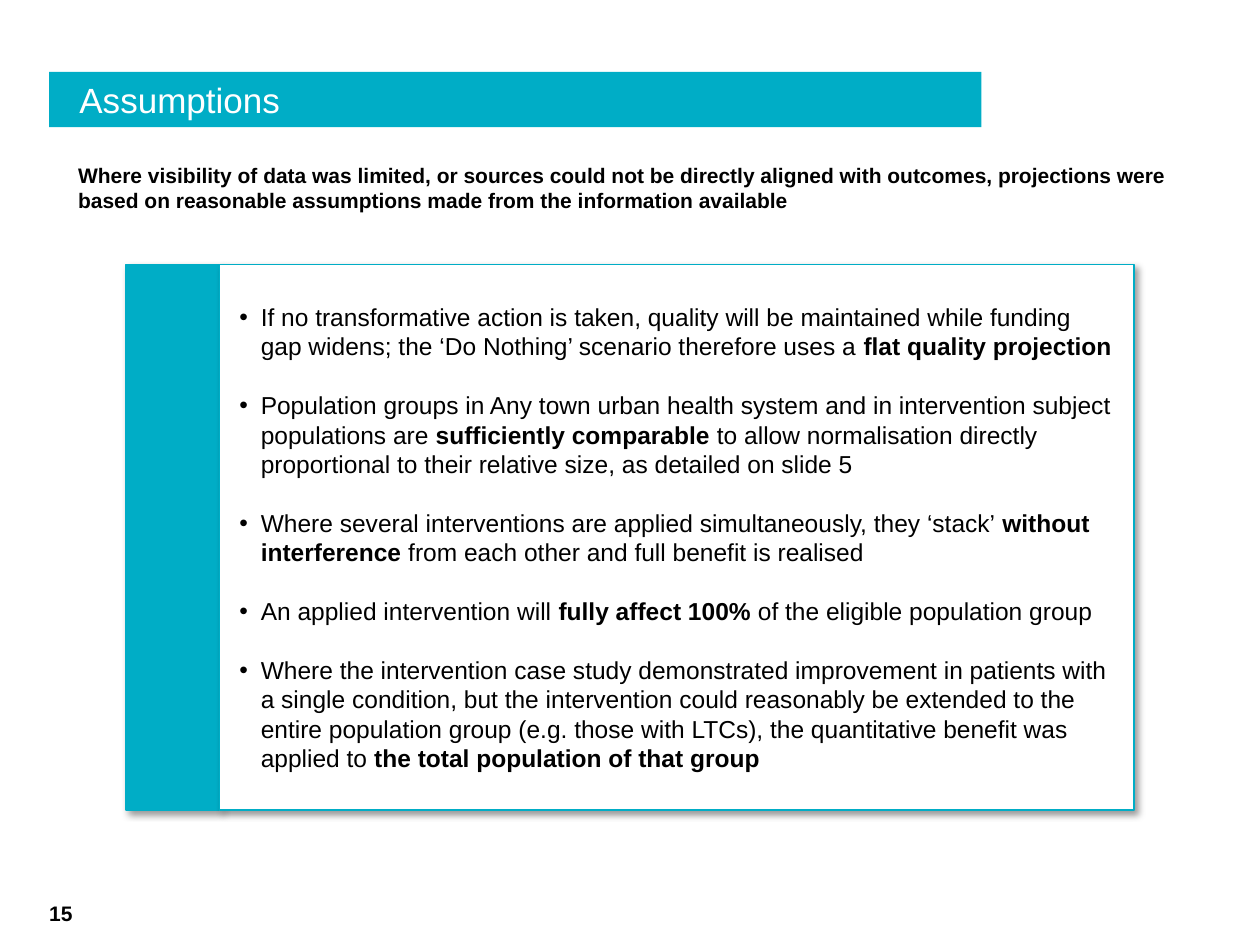
"""Build the Assumptions slide."""
import pptx
import pptx.dml.color
import pptx.enum.shapes
import pptx.enum.text
import pptx.oxml
import pptx.oxml.ns
import pptx.util
from pptx.util import Inches

TEAL, WHITE, BLACK = "00ADC6", "FFFFFF", "000000"
MIDDLE = pptx.enum.text.MSO_ANCHOR.MIDDLE
BOTTOM = pptx.enum.text.MSO_ANCHOR.BOTTOM
ASSUMPTIONS = [
    [("If no transformative action is taken, quality will be maintained while funding gap widens; "
      "the ‘Do Nothing’ scenario therefore uses a ", False), ("flat quality projection", True)],
    [("Population groups in Any town urban health system and in intervention subject populations are ", False),
     ("sufficiently comparable ", True),
     ("to allow normalisation directly proportional to their relative size, as detailed on slide 5", False)],
    [("Where several interventions are applied simultaneously, they ‘stack’ ", False),
     ("without interference", True), (" from each other and full benefit is realised", False)],
    [("An applied intervention will ", False), ("fully affect 100% ", True),
     ("of the eligible population group", False)],
    [("Where the intervention case study demonstrated improvement in patients with a single condition, "
      "but the intervention could reasonably be extended to the entire population group "
      "(e.g. those with LTCs), the quantitative benefit was applied to ", False),
     ("the total population of that group", True)],
]


def color(value):
    """Turn a hex string into a colour."""
    return pptx.dml.color.RGBColor.from_string(value)


class SlideBuilder:
    """Hold the style and the current slide."""

    font_name = "Arial"

    def __init__(self, presentation):
        """Add a blank slide."""
        self.slide = presentation.slides.add_slide(presentation.slide_layouts[6])

    def rectangle(self, left, top, width, height, fill, line=None, shadow=False):
        """Add a filled rectangle."""
        shape = self.slide.shapes.add_shape(
            pptx.enum.shapes.MSO_SHAPE.RECTANGLE, Inches(left), Inches(top), Inches(width), Inches(height))
        shape.shadow.inherit = False
        shape.fill.solid()
        shape.fill.fore_color.rgb = color(fill)
        if line:
            shape.line.color.rgb = color(line)
            shape.line.width = pptx.util.Pt(0.75)
        else:
            shape.line.fill.background()
        if shadow:
            self.drop_shadow(shape)
        return shape

    def drop_shadow(self, shape):
        """Give a shape a soft shadow to the lower right."""
        effects = shape._element.spPr.find(pptx.oxml.ns.qn("a:effectLst"))
        effects.append(pptx.oxml.parse_xml(
            f'<a:outerShdw {pptx.oxml.ns.nsdecls("a")} blurRad="{pptx.util.Pt(4)}" '
            f'dist="{pptx.util.Pt(3)}" dir="2700000" algn="tl" rotWithShape="0">'
            f'<a:srgbClr val="{BLACK}"><a:alpha val="40000"/></a:srgbClr></a:outerShdw>'))

    def frame(self, shape, margins, anchor):
        """Set the wrapping, margins and anchor of a shape's text."""
        frame = shape.text_frame
        frame.word_wrap = True
        frame.vertical_anchor = anchor
        frame.margin_left, frame.margin_top, frame.margin_right, frame.margin_bottom = map(Inches, margins)
        return frame

    def style(self, paragraph, size, fill, bold=None):
        """Set a paragraph's font and alignment."""
        paragraph.alignment = pptx.enum.text.PP_ALIGN.LEFT
        paragraph.font.name = self.font_name
        paragraph.font.size = pptx.util.Pt(size)
        paragraph.font.color.rgb = color(fill)
        paragraph.font.bold = bold

    def label(self, shape, text, size, fill, margins, anchor, bold=False):
        """Write one paragraph in a shape."""
        paragraph = self.frame(shape, margins, anchor).paragraphs[0]
        paragraph.add_run().text = text
        self.style(paragraph, size, fill, bold)

    def text(self, left, top, width, height, text, size, margins, anchor):
        """Add a bold text box."""
        box = self.slide.shapes.add_textbox(Inches(left), Inches(top), Inches(width), Inches(height))
        self.label(box, text, size, BLACK, margins, anchor, True)

    def bullets(self, shape, items, size, gap, margins):
        """Write a bulleted list in a shape."""
        frame = self.frame(shape, margins, MIDDLE)
        for index, item in enumerate(items):
            paragraph = frame.paragraphs[0] if index == 0 else frame.add_paragraph()
            properties = paragraph._p.get_or_add_pPr()
            properties.set("marL", str(Inches(0.26)))
            properties.set("indent", str(Inches(-0.17)))
            properties.append(pptx.oxml.parse_xml(
                f'<a:buFont {pptx.oxml.ns.nsdecls("a")} typeface="{self.font_name}"/>'))
            properties.append(pptx.oxml.parse_xml(
                f'<a:buChar {pptx.oxml.ns.nsdecls("a")} char="•"/>'))
            if index:
                paragraph.space_before = pptx.util.Pt(gap)
            self.style(paragraph, size, BLACK)
            for words, bold in item:
                run = paragraph.add_run()
                run.text = words
                run.font.bold = bold


def main():
    """Build and save the slide."""
    presentation = pptx.Presentation()
    presentation.slide_width, presentation.slide_height = Inches(10), Inches(7.5)
    builder = SlideBuilder(presentation)
    title = builder.rectangle(0.39, 0.57, 7.4, 0.44, TEAL)
    builder.label(title, "Assumptions", 20, WHITE, (0.24, 0, 0, 0), MIDDLE)
    builder.text(0.51, 1.23, 8.98, 0.52,
                 "Where visibility of data was limited, or sources could not be directly aligned with outcomes, "
                 "projections were based on reasonable assumptions made from the information available",
                 12, (0.11, 0.06, 0.11, 0.06), pptx.enum.text.MSO_ANCHOR.TOP)
    builder.rectangle(1, 2.1, 0.74, 4.33, TEAL, TEAL, shadow=True)
    panel = builder.rectangle(1.74, 2.1, 7.26, 4.33, WHITE, TEAL, shadow=True)
    builder.bullets(panel, ASSUMPTIONS, 14, 16.8, (0.07, 0, 0.17, 0))
    builder.text(0.39, 7.15, 0.33, 0.2, "15", 12, (0, 0, 0, 0), BOTTOM)
    presentation.save("out.pptx")


if __name__ == "__main__":
    main()
